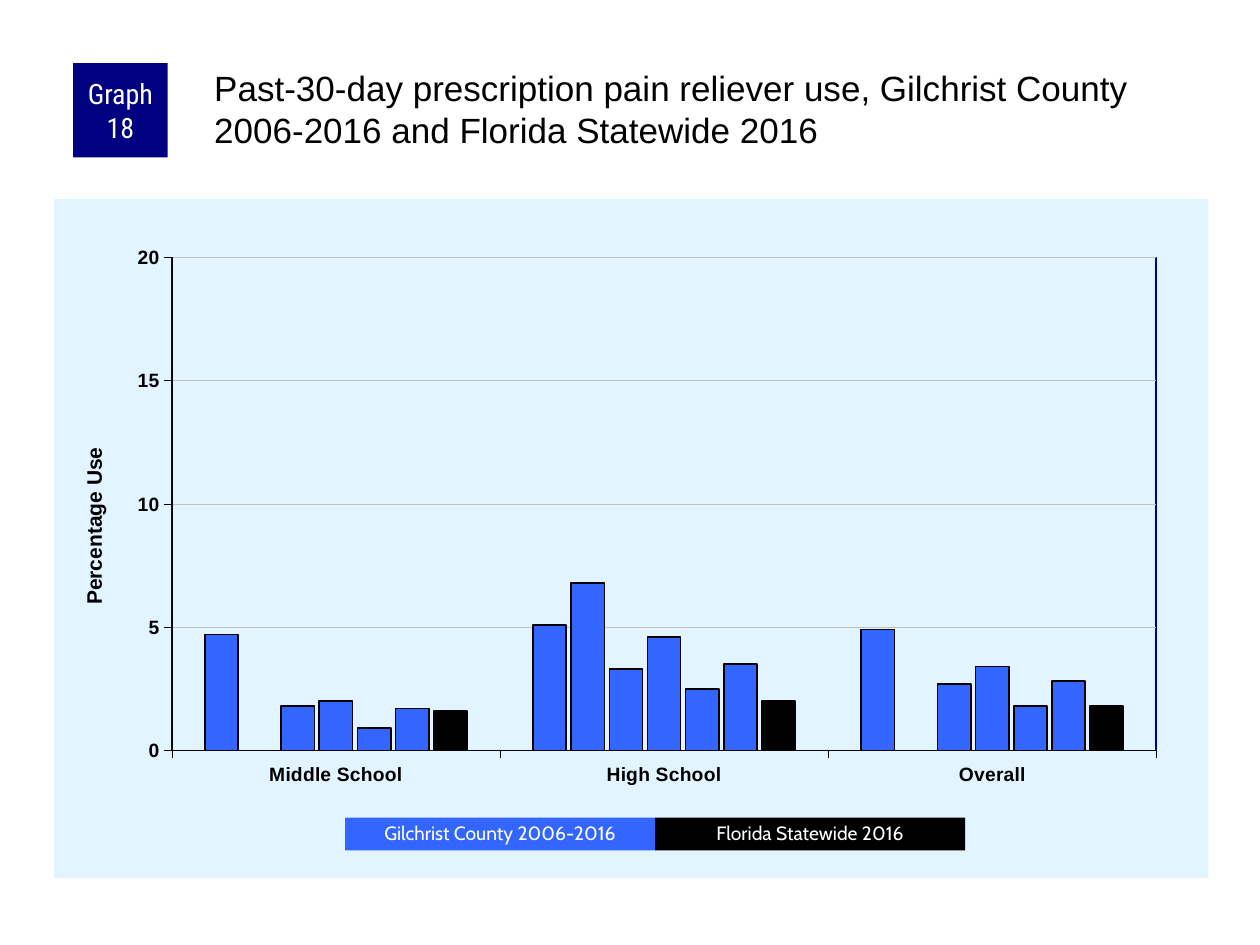
from lxml import etree
from pptx import Presentation
from pptx.chart.data import CategoryChartData
from pptx.dml.color import RGBColor
from pptx.enum.chart import XL_CHART_TYPE, XL_TICK_MARK
from pptx.enum.shapes import MSO_SHAPE
from pptx.enum.text import MSO_ANCHOR, MSO_AUTO_SIZE, PP_ALIGN
from pptx.oxml import parse_xml
from pptx.oxml.ns import nsdecls, qn
from pptx.util import Inches, Pt

COLUMNS = XL_CHART_TYPE.COLUMN_CLUSTERED
TICK_OUT = XL_TICK_MARK.OUTSIDE
RECTANGLE = MSO_SHAPE.RECTANGLE
TOP, MIDDLE = MSO_ANCHOR.TOP, MSO_ANCHOR.MIDDLE
LEFT, CENTER = PP_ALIGN.LEFT, PP_ALIGN.CENTER
FIXED_SIZE = MSO_AUTO_SIZE.NONE

TITLE = ("Past-30-day prescription pain reliever use, Gilchrist County "
         "2006-2016 and Florida Statewide 2016")
BADGE = "Graph 18"
AXIS_TITLE = "Percentage Use"
CATEGORIES = ["Middle School", "High School", "Overall"]
COUNTY_SERIES = [
    (4.7, 5.1, 4.9),
    (0, 6.8, 0),
    (1.8, 3.3, 2.7),
    (2, 4.6, 3.4),
    (0.9, 2.5, 1.8),
    (1.7, 3.5, 2.8),
]
STATE_SERIES = (1.6, 2, 1.8)
LEGEND = [("Gilchrist County 2006-2016", "county"),
          ("Florida Statewide 2016", "state")]

THEME = {
    "colors": {"county": "3366FF", "state": "000000", "text": "000000",
               "light": "FFFFFF", "navy": "000080", "panel": "E1F4FF",
               "grid": "C0C0C0"},
    "sizes": {"title": 20, "badge": 16, "axis_title": 12, "label": 11,
              "chart": 8},
    "fonts": {"main": "Arial", "badge": "Roboto Condensed", "legend": "Cabin"},
}


def color(name):
    return RGBColor.from_string(THEME["colors"][name])


def style_font(font, size, face="main", fill="text", bold=False):
    font.size = Pt(THEME["sizes"][size])
    font.name = THEME["fonts"][face]
    font.color.rgb = color(fill)
    font.bold = bold


def style_line(line, name, width):
    line.color.rgb = color(name)
    line.width = Pt(width)


def write_text(shape, text, size, face="main", fill="text", align=CENTER,
               anchor=MIDDLE, insets=(0.1, 0.05, 0.1, 0.05), spacing=1.0):
    frame = shape.text_frame
    frame.word_wrap = True
    frame.auto_size = FIXED_SIZE
    frame.vertical_anchor = anchor
    (frame.margin_left, frame.margin_top,
     frame.margin_right, frame.margin_bottom) = map(Inches, insets)
    paragraph = frame.paragraphs[0]
    paragraph.alignment = align
    paragraph.line_spacing = spacing
    run = paragraph.add_run()
    run.text = text
    style_font(run.font, size, face, fill)


def add_box(slide, bounds, fill, text, **text_format):
    shape = slide.shapes.add_shape(RECTANGLE, *map(Inches, bounds))
    shape.shadow.inherit = False
    shape.fill.solid()
    shape.fill.fore_color.rgb = color(fill)
    shape.line.fill.background()
    write_text(shape, text, fill="light", **text_format)


def set_layout(parent, index, **values):
    for layout in parent.findall(qn("c:layout")):
        parent.remove(layout)
    layout = parse_xml(f'<c:layout {nsdecls("c")}><c:manualLayout/></c:layout>')
    for name, value in values.items():
        etree.SubElement(layout[0], qn(f"c:{name}"), val=str(value))
    parent.insert(index, layout)


def format_axes(chart):
    for axis in (chart.category_axis, chart.value_axis):
        axis.major_tick_mark = TICK_OUT
        style_font(axis.tick_labels.font, "label", bold=True)
        style_line(axis.format.line, "text", 0.25)
    axis = chart.value_axis
    axis.minimum_scale, axis.maximum_scale, axis.major_unit = 0, 20, 5
    axis.has_major_gridlines = True
    style_line(axis.major_gridlines.format.line, "grid", 0.25)
    axis.tick_labels.number_format = "0"
    axis.tick_labels.number_format_is_linked = False
    paragraph = axis.axis_title.text_frame.paragraphs[0]
    run = paragraph.add_run()
    run.text = AXIS_TITLE
    style_font(run.font, "axis_title", bold=True)
    title = axis.axis_title._element
    title.find(".//" + qn("a:bodyPr")).set("rot", "-5400000")
    set_layout(title, 1, xMode="edge", yMode="edge", x=0.02, y=0.36)


def add_chart(slide):
    data = CategoryChartData()
    data.categories = CATEGORIES
    for number, values in enumerate(COUNTY_SERIES + [STATE_SERIES], 1):
        data.add_series(f"Series {number}", values)
    bounds = map(Inches, (0.43, 1.58, 9.16, 5.39))
    chart = slide.shapes.add_chart(COLUMNS, *bounds, data).chart
    chart.has_legend = False
    chart.has_title = False
    style_font(chart.font, "chart")
    plot = chart.plots[0]
    plot.vary_by_categories = False
    plot.gap_width, plot.overlap = 200, -15
    for index, series in enumerate(plot.series):
        series.format.fill.solid()
        series.format.fill.fore_color.rgb = color(
            "county" if index < len(COUNTY_SERIES) else "state")
        style_line(series.format.line, "text", 1)
    format_axes(chart)

    chart_part = chart._chartSpace.find(qn("c:chart"))
    plot_area = chart_part.find(qn("c:plotArea"))
    set_layout(plot_area, 0, layoutTarget="inner", xMode="edge", yMode="edge",
               x=0.102, y=0.086, w=0.853, h=0.726)
    colors = THEME["colors"]
    plot_area.append(parse_xml(
        f'<c:spPr {nsdecls("c", "a")}><a:noFill/><a:ln w="{Pt(1)}"><a:solidFill>'
        f'<a:srgbClr val="{colors["navy"]}"/></a:solidFill></a:ln></c:spPr>'))
    chart_part.addnext(parse_xml(
        f'<c:spPr {nsdecls("c", "a")}><a:solidFill><a:srgbClr val="{colors["panel"]}"/>'
        f'</a:solidFill><a:ln><a:noFill/></a:ln></c:spPr>'))


def main():
    presentation = Presentation()
    presentation.slide_width, presentation.slide_height = Inches(10), Inches(7.5)
    slide = presentation.slides.add_slide(presentation.slide_layouts[5])
    title = slide.shapes.title
    title.left, title.top, title.width, title.height = map(
        Inches, (1.67, 0.5, 7.92, 0.83))
    write_text(title, TITLE, "title", align=LEFT, anchor=TOP,
               insets=(0.03, 0.03, 0, 0))
    add_chart(slide)
    add_box(slide, (0.58, 0.5, 0.75, 0.75), "navy", BADGE, size="badge",
            face="badge", insets=(0.05, 0, 0.05, 0))
    legend_width = 2.46
    for index, (text, fill) in enumerate(LEGEND):
        add_box(slide, (2.74 + index * legend_width, 6.49, legend_width, 0.26),
                fill, text, size="label", face="legend", spacing=0.9)
    presentation.save("out.pptx")


if __name__ == "__main__":
    main()
